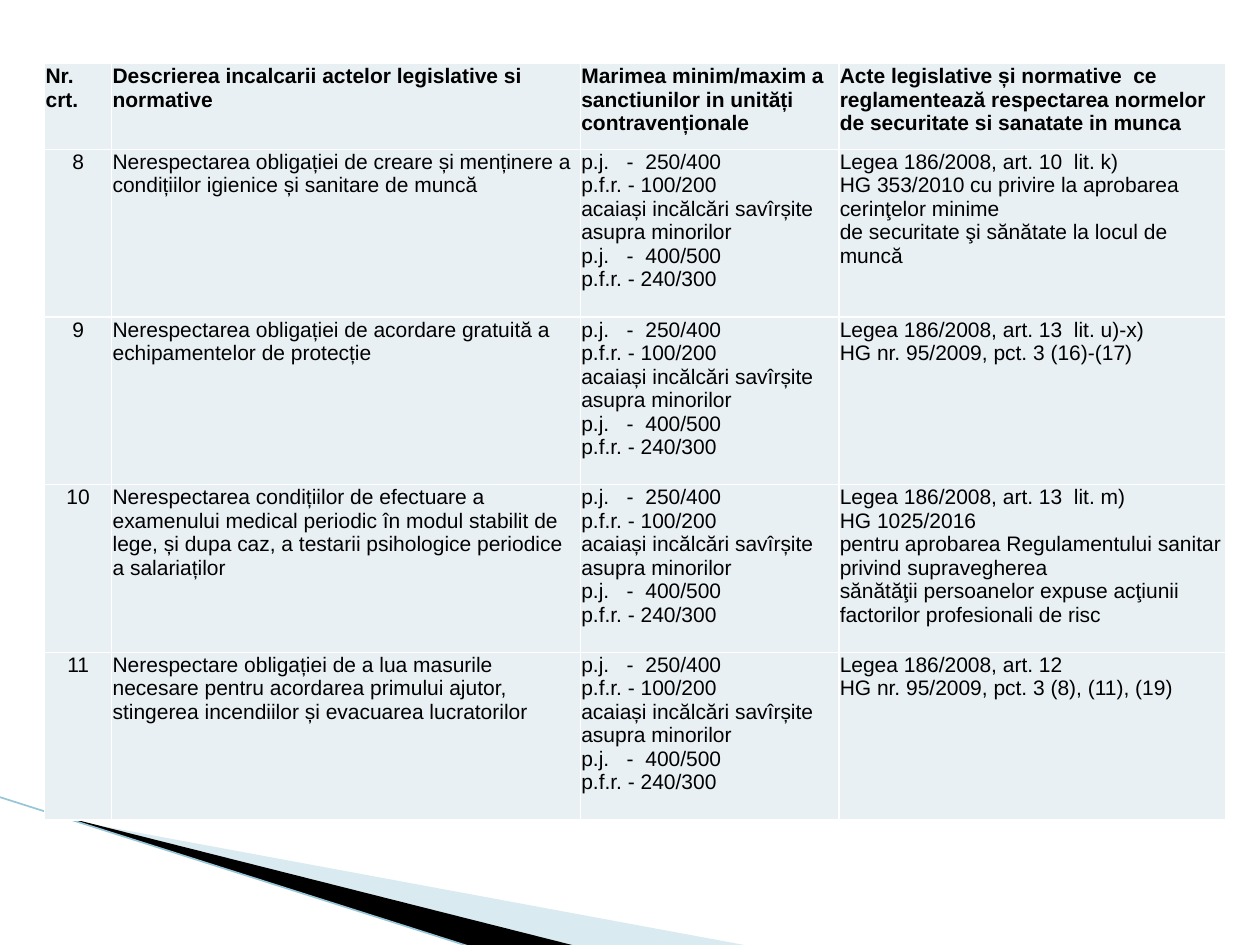
from lxml.etree import SubElement
from pptx import Presentation
from pptx.dml.color import RGBColor
from pptx.enum.shapes import MSO_CONNECTOR
from pptx.enum.text import PP_ALIGN
from pptx.oxml.ns import qn
from pptx.util import Cm, Pt

COLORS = {
    "text": "000000",
    "cell": "E8F0F4",
    "border": "FFFFFF",
    "pale_wedge": "A0CBDC",
    "dark_wedge": "000000",
    "edge": "97C5D8",
}
CELL_FORMAT = {
    "margin_left": Cm(0.02),
    "margin_right": Cm(0.02),
    "margin_top": Cm(0.02),
    "margin_bottom": Cm(0.02),
}
FONT_FORMAT = {"name": "Arial", "size": Pt(12)}

COLUMN_WIDTHS = [1.35, 9.45, 5.21, 7.8]
HEADER_HEIGHT = 1.73

HEADINGS = [
    "Nr. crt.",
    "Descrierea incalcarii actelor legislative si normative",
    "Marimea minim/maxim a sanctiunilor in unități contravenționale",
    "Acte legislative și normative  ce reglamentează respectarea normelor "
    "de securitate si sanatate in munca",
]
SANCTIONS = [
    "p.j.   -  250/400",
    "p.f.r. - 100/200",
    "acaiași incălcări savîrșite asupra minorilor",
    "p.j.   -  400/500",
    "p.f.r. - 240/300",
]
FIRST_NUMBER = 8
# Each violation with the acts that regulate it
VIOLATIONS = [
    ("Nerespectarea obligației de creare și menținere a condițiilor igienice "
     "și sanitare de muncă",
     ["Legea 186/2008, art. 10  lit. k)",
      "HG 353/2010 cu privire la aprobarea cerinţelor minime\n"
      "de securitate şi sănătate la locul de muncă"]),
    ("Nerespectarea obligației de acordare gratuită a echipamentelor de protecție",
     ["Legea 186/2008, art. 13  lit. u)-x)",
      "HG nr. 95/2009, pct. 3 (16)-(17)"]),
    ("Nerespectarea condițiilor de efectuare a examenului medical periodic în "
     "modul stabilit de lege, și dupa caz, a testarii psihologice periodice "
     "a salariaților",
     ["Legea 186/2008, art. 13  lit. m)",
      "HG 1025/2016",
      "pentru aprobarea Regulamentului sanitar privind supravegherea\n"
      "sănătăţii persoanelor expuse acţiunii factorilor profesionali de risc"]),
    ("Nerespectare obligației de a lua masurile necesare pentru acordarea "
     "primului ajutor, stingerea incendiilor și evacuarea lucratorilor",
     ["Legea 186/2008, art. 12",
      "HG nr. 95/2009, pct. 3 (8), (11), (19)"]),
]


def rgb(key):
    return RGBColor.from_string(COLORS[key])


def add_wedge(slide, left, top, points, color, opacity=None):
    corners = [(Cm(left + x), Cm(top + y)) for x, y in points]
    builder = slide.shapes.build_freeform(*corners[0])
    builder.add_line_segments(corners[1:], close=True)
    wedge = builder.convert_to_shape()
    wedge.shadow.inherit = False
    wedge.fill.solid()
    wedge.fill.fore_color.rgb = rgb(color)
    wedge.line.fill.background()
    if opacity:
        tint = wedge.fill._xPr.find(".//" + qn("a:srgbClr"))
        SubElement(tint, qn("a:alpha"), val=str(opacity * 1000))


def add_corner_decoration(slide, left, top, width, height):
    """Two thin wedges and an edge line that fan out to the bottom."""
    add_wedge(slide, left, top,
              [(1.4, 0.46), (15.11, height), (11.58, height), (1.4, 0.43)],
              "pale_wedge", opacity=40)
    add_wedge(slide, left, top,
              [(1.35, 0.41), (11.61, height), (9.45, height), (1.37, 0.43)],
              "dark_wedge")
    edge = slide.shapes.add_connector(
        MSO_CONNECTOR.STRAIGHT,
        Cm(left), Cm(top), Cm(left + width), Cm(top + height))
    edge.line.color.rgb = rgb("edge")
    edge.line.width = Pt(0.95)
    SubElement(edge._element.spPr, qn("a:effectLst"))


def add_borders(cell):
    properties = cell._tc.get_or_add_tcPr()
    for side in ("lnL", "lnR", "lnT", "lnB"):
        border = SubElement(properties, qn(f"a:{side}"), w=str(Pt(1)))
        fill = SubElement(border, qn("a:solidFill"))
        SubElement(fill, qn("a:srgbClr"), val=COLORS["border"])


def fill_cell(cell, lines, bold, alignment):
    add_borders(cell)
    cell.fill.solid()
    cell.fill.fore_color.rgb = rgb("cell")
    for name, value in CELL_FORMAT.items():
        setattr(cell, name, value)
    frame = cell.text_frame
    for index, line in enumerate(lines):
        paragraph = frame.add_paragraph() if index else frame.paragraphs[0]
        paragraph.text = line
        paragraph.alignment = alignment
        for name, value in FONT_FORMAT.items():
            setattr(paragraph.font, name, value)
        paragraph.font.bold = bold
        paragraph.font.color.rgb = rgb("text")


def add_sanctions_table(slide, left, top, width, height):
    rows = [[[heading] for heading in HEADINGS]]
    for number, (violation, acts) in enumerate(VIOLATIONS, FIRST_NUMBER):
        rows.append([[str(number)], [violation], SANCTIONS, acts])

    table = slide.shapes.add_table(
        len(rows), len(HEADINGS),
        Cm(left), Cm(top), Cm(width), Cm(height)).table
    for column, column_width in zip(table.columns, COLUMN_WIDTHS):
        column.width = Cm(column_width)
    body_height = (height - HEADER_HEIGHT) / len(VIOLATIONS)

    for r, row in enumerate(rows):
        is_header = r == 0
        table.rows[r].height = Cm(HEADER_HEIGHT if is_header else body_height)
        for c, lines in enumerate(row):
            centred = c == 0 and not is_header
            fill_cell(table.cell(r, c), lines, is_header,
                      PP_ALIGN.CENTER if centred else PP_ALIGN.LEFT)


def main():
    presentation = Presentation()
    presentation.slide_width = Cm(25.4)
    presentation.slide_height = Cm(19.05)
    slide = presentation.slides.add_slide(presentation.slide_layouts[6])
    add_corner_decoration(slide, 0, 16.07, 9.43, 3)
    add_sanctions_table(slide, 0.9, 1.28, sum(COLUMN_WIDTHS), 15.25)
    presentation.save("out.pptx")


if __name__ == "__main__":
    main()
